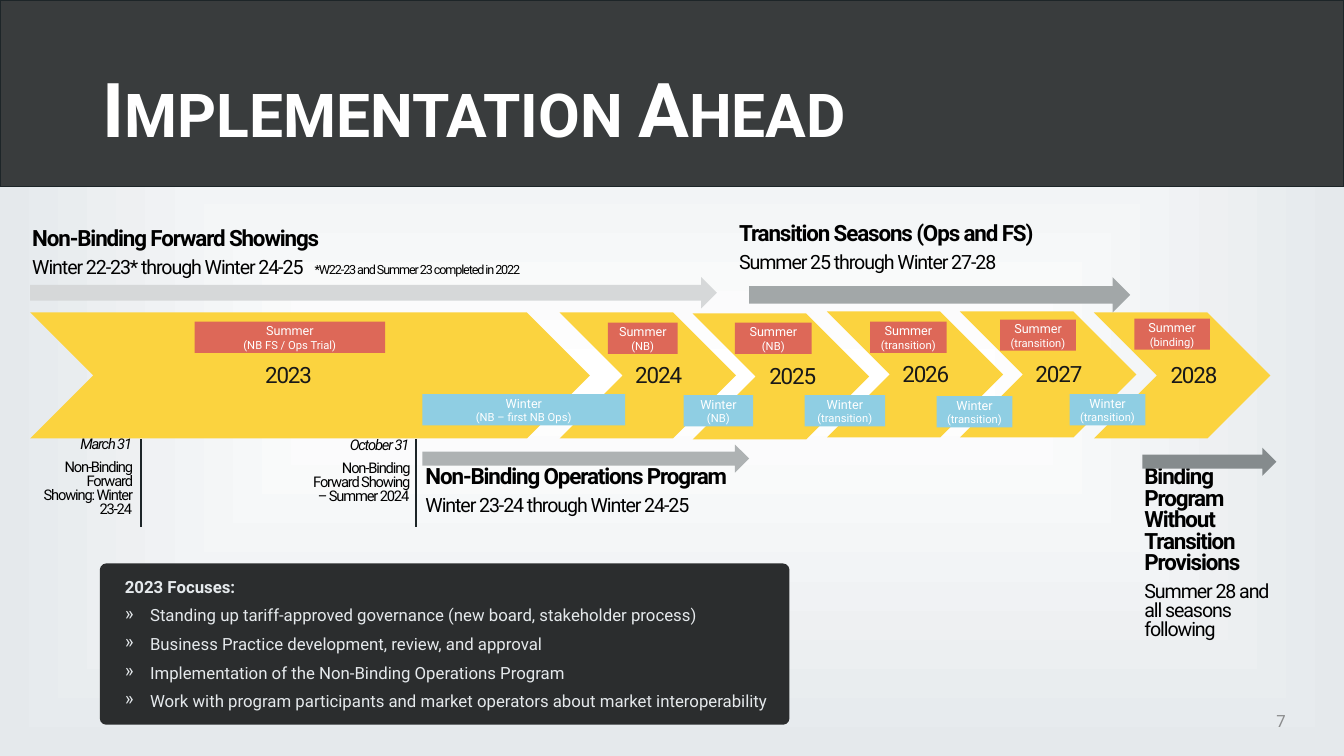
import pptx
import pptx.util
import pptx.dml.color
import pptx.enum.shapes
import pptx.enum.text
import pptx.oxml.ns
from lxml import etree

Inches, Pt = pptx.util.Inches, pptx.util.Pt
RGBColor = pptx.dml.color.RGBColor
SHAPE = pptx.enum.shapes.MSO_SHAPE
ANCHOR = pptx.enum.text.MSO_ANCHOR
ALIGN = pptx.enum.text.PP_ALIGN
qn = pptx.oxml.ns.qn

WHITE, BLACK = RGBColor(255, 255, 255), RGBColor(0, 0, 0)
PALE = RGBColor(0xE5, 0xE9, 0xEC)
HEADER = RGBColor(0x39, 0x3C, 0x3D)
RULE = RGBColor(0x1D, 0x25, 0x28)
PANEL = RGBColor(0x2B, 0x2D, 0x2E)
NUMBER = RGBColor(0x8B, 0x8C, 0x8D)
YELLOW = RGBColor(0xFB, 0xD3, 0x3F)
YEAR = RGBColor(0x18, 0x18, 0x18)
SUMMER = RGBColor(0xDD, 0x68, 0x58)
WINTER = RGBColor(0x8F, 0xCE, 0xE3)

# Content
TITLE = "Implementation Ahead"
FOCUS_HEADING = "2023 Focuses:"
FOCUSES = [
    "Standing up tariff-approved governance (new board, stakeholder process)",
    "Business Practice development, review, and approval",
    "Implementation of the Non-Binding Operations Program",
    "Work with program participants and market operators about market interoperability",
]
# year, left, top, width, distance from chevron to year label
YEARS = [
    ("2023", 0.3, 3.1, 5.55, 2.3),
    ("2024", 5.55, 3.1, 1.75, 0.72),
    ("2025", 6.87, 3.11, 1.75, 0.73),
    ("2026", 8.2, 3.09, 1.75, 0.72),
    ("2027", 9.52, 3.09, 1.75, 0.72),
    ("2028", 10.85, 3.1, 1.75, 0.73),
]
# season, detail, left, top, width
SEASONS = [
    ("Summer", "(NB FS / Ops Trial)", 1.93, 3.19, 1.89),
    ("Summer", "(NB)", 6.03, 3.2, 0.69),
    ("Summer", "(NB)", 7.29, 3.2, 0.76),
    ("Summer", "(transition)", 8.63, 3.19, 0.76),
    ("Summer", "(transition)", 9.92, 3.17, 0.75),
    ("Summer", "(binding)", 11.25, 3.16, 0.75),
    ("Winter", "(NB – first NB Ops)", 4.19, 3.91, 2.01),
    ("Winter", "(NB)", 6.78, 3.92, 0.69),
    ("Winter", "(transition)", 7.98, 3.92, 0.8),
    ("Winter", "(transition)", 9.29, 3.93, 0.75),
    ("Winter", "(transition)", 10.61, 3.91, 0.75),
]
# heading, period, footnote, text box, anchor, arrow box, arrow colour
PHASES = [
    ("Non-Binding Forward Showings", "Winter 22-23* through Winter 24-25",
     "*W22-23 and Summer 23 completed in 2022", (0.29, 2.17, 5.26, 0.62),
     ANCHOR.BOTTOM, (0.3, 2.75, 6.81, 0.31), RGBColor(0xD6, 0xD8, 0xD9)),
    ("Non-Binding Operations Program", "Winter 23-24 through Winter 24-25",
     "", (4.19, 4.61, 3.73, 0.62),
     ANCHOR.TOP, (4.19, 4.41, 3.24, 0.28), RGBColor(0xAE, 0xB2, 0xB3)),
    ("Transition Seasons (Ops and FS)", "Summer 25 through Winter 27-28",
     "", (7.3, 2.12, 3.91, 0.62),
     ANCHOR.BOTTOM, (7.43, 2.75, 3.78, 0.35), RGBColor(0xA2, 0xA7, 0xA8)),
    ("Binding Program Without Transition Provisions",
     "Summer 28 and all seasons following", "", (11.32, 4.61, 1.41, 1.86),
     ANCHOR.TOP, (11.33, 4.44, 1.33, 0.28), RGBColor(0x85, 0x8B, 0x8D)),
]
# date, event, text box, x of the rule
MILESTONES = [
    ("March 31", "Non-Binding Forward Showing: Winter 23-24",
     (0.31, 4.32, 1.03, 0.79), 1.4),
    ("October 31", "Non-Binding Forward Showing – Summer 2024",
     (3.07, 4.33, 1.02, 0.79), 4.13),
]

prs = pptx.Presentation()
prs.slide_width, prs.slide_height = Inches(13.33), Inches(7.5)
s = prs.slides.add_slide(prs.slide_layouts[6])


def add_shape(kind, box, colour):
    sp = s.shapes.add_shape(kind, *map(Inches, box))
    sp.shadow.inherit = False
    sp.fill.solid()
    sp.fill.fore_color.rgb = colour
    sp.line.fill.background()
    return sp


def write(sp, paras, colour, anchor=ANCHOR.TOP, inset=0.03, tight=False, **para_format):
    """Each paragraph is a list of (text, font format) runs."""
    tf = sp.text_frame
    frame_format = dict(word_wrap=True, vertical_anchor=anchor,
                        margin_left=Inches(inset), margin_right=Inches(inset),
                        margin_top=Inches(min(inset, 0.05)),
                        margin_bottom=Inches(min(inset, 0.05)))
    for name, value in frame_format.items():
        setattr(tf, name, value)
    for i, runs in enumerate(paras):
        p = tf.add_paragraph() if i else tf.paragraphs[0]
        for name, value in para_format.items():
            if i or name != "space_before":
                setattr(p, name, value)
        for text, font_format in runs:
            r = p.add_run()
            r.text = text
            r.font.name = "Roboto"
            r.font.color.rgb = colour
            for name, value in font_format.items():
                setattr(r.font, name, value)
            if tight:
                r.font._element.set("spc", "-80")
    return tf


def add_text(box, paras, colour, **text_format):
    return write(s.shapes.add_textbox(*map(Inches, box)), paras, colour, **text_format)


# Background: gradient spreading from the centre
fill = s.background.fill
fill.gradient()
for stop, colour, position in zip(fill.gradient_stops, (WHITE, PALE), (0, 1)):
    stop.color.rgb = colour
    stop.position = position
grad = s.background._cSld.find(".//" + qn("a:gradFill"))
grad.remove(grad.find(qn("a:lin")))
spread = etree.SubElement(grad, qn("a:path"), {"path": "shape"})
etree.SubElement(spread, qn("a:fillToRect"), dict.fromkeys("ltrb", "50000"))

# Header, title and slide number
header = add_shape(SHAPE.RECTANGLE, (0, 0, 13.33, 1.85), HEADER)
header.line.color.rgb = RULE
header.line.width = Pt(1)
tf = add_text((0.92, 0.4, 11.5, 1.45), [[(TITLE, dict(size=Pt(54), bold=True))]],
              WHITE, anchor=ANCHOR.MIDDLE, inset=0.1, line_spacing=0.9)
tf.paragraphs[0].runs[0].font._element.set("cap", "small")
add_text((12.23, 6.95, 0.62, 0.4), [[("7", dict(size=Pt(12)))]], NUMBER,
         anchor=ANCHOR.MIDDLE, inset=0.1, alignment=ALIGN.RIGHT)

# Focus panel
panel = add_shape(SHAPE.ROUNDED_RECTANGLE, (0.99, 5.59, 6.84, 1.6), PANEL)
panel.adjustments[0] = 0.04
focus_lines = [[(FOCUS_HEADING, dict(size=Pt(12), bold=True))]]
focus_lines += [[(text, dict(size=Pt(12)))] for text in FOCUSES]
tf = add_text((1.14, 5.67, 7.24, 1.38), focus_lines, PALE, inset=0.1, space_before=Pt(6))
for p in tf.paragraphs[1:]:
    pPr = p._p.get_or_add_pPr()
    pPr.set("marL", str(Inches(0.25)))
    pPr.set("indent", str(-Inches(0.25)))
    etree.SubElement(pPr, qn("a:buChar"), {"char": "»"})

# Year chevrons
for year, left, top, width, offset in YEARS:
    add_shape(SHAPE.CHEVRON, (left, top, width, 1.25), YELLOW)
    add_text((left + offset, top + 0.51, 1.08, 0.27), [[(year, dict(size=Pt(16)))]],
             YEAR, anchor=ANCHOR.MIDDLE, tight=True, line_spacing=0.8)

# Season tags
for season, detail, left, top, width in SEASONS:
    tag = add_shape(SHAPE.RECTANGLE, (left, top, width, 0.31),
                    SUMMER if season == "Summer" else WINTER)
    write(tag, [[(season, dict(size=Pt(9)))], [(detail, dict(size=Pt(8)))]], WHITE,
          anchor=ANCHOR.MIDDLE, alignment=ALIGN.CENTER)

# Program phases with their arrows
for heading, period, footnote, box, anchor, arrow_box, colour in PHASES:
    period_runs = [(period, dict(size=Pt(14)))]
    if footnote:
        period_runs.append(("\t" + footnote, dict(size=Pt(9))))
    tf = add_text(box, [[(heading, dict(size=Pt(16), bold=True))], period_runs], BLACK,
                  anchor=anchor, tight=True, line_spacing=0.8, space_before=Pt(6))
    if footnote:
        tabs = etree.SubElement(tf.paragraphs[1]._p.get_or_add_pPr(), qn("a:tabLst"))
        etree.SubElement(tabs, qn("a:tab"), {"pos": str(Inches(2.8)), "algn": "l"})
    add_shape(SHAPE.RIGHT_ARROW, arrow_box, colour)

# Milestones
for date, event, box, x in MILESTONES:
    add_text(box, [[(date, dict(size=Pt(10.5), italic=True))],
                   [(event, dict(size=Pt(10.5)))]], BLACK, tight=True,
             alignment=ALIGN.RIGHT, line_spacing=0.8, space_before=Pt(6))
    rule = s.shapes.add_connector(pptx.enum.shapes.MSO_CONNECTOR.STRAIGHT,
                                  *map(Inches, (x, 4.36, x, 5.23)))
    rule.line.color.rgb = RULE
    rule.line.width = Pt(1.5)
    etree.SubElement(rule._element.spPr, qn("a:effectLst"))

prs.save("out.pptx")
